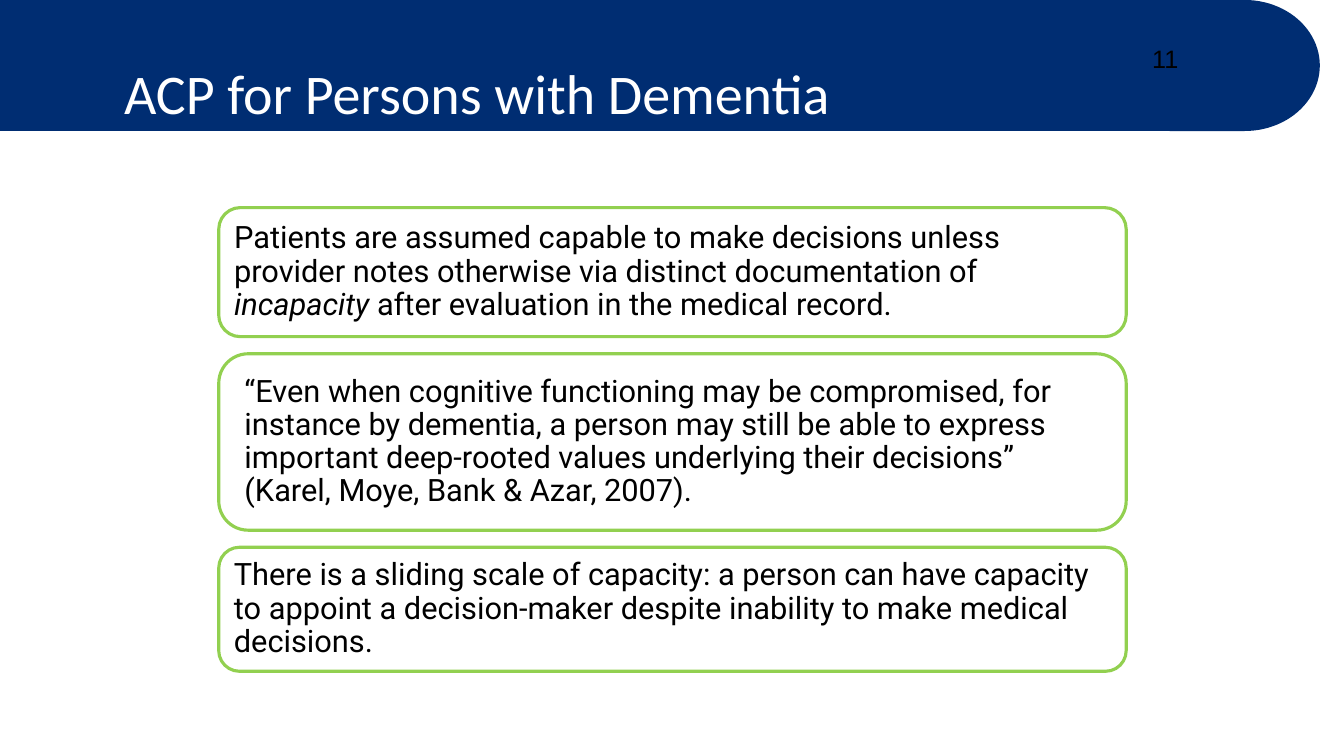
import pptx
import pptx.dml.color
import pptx.enum.shapes
import pptx.enum.text
import pptx.util

Inches = pptx.util.Inches
Pt = pptx.util.Pt
MSO_SHAPE = pptx.enum.shapes.MSO_SHAPE
MSO_ANCHOR = pptx.enum.text.MSO_ANCHOR
PP_ALIGN = pptx.enum.text.PP_ALIGN

COLORS = {"navy": "002D72", "green": "92D050", "black": "000000", "white": "FFFFFF"}

# Each statement: height, inset, runs of (text, italic)
STATEMENTS = [
    (1.28, 0.09, [
        ("Patients are assumed capable to make decisions unless provider notes "
         "otherwise via distinct documentation of ", False),
        ("incapacity", True),
        (" after evaluation in the medical record.", False),
    ]),
    (1.75, 0.17, [
        ("“Even when cognitive functioning may be compromised, for instance by "
         "dementia, a person may still be able to express important deep-rooted "
         "values underlying their decisions” (Karel, Moye, Bank & Azar, 2007).", False),
    ]),
    (1.23, 0.09, [
        ("There is a sliding scale of capacity: a person can have capacity to "
         "appoint a decision-maker despite inability to make medical decisions.", False),
    ]),
]


def rgb(name):
    return pptx.dml.color.RGBColor.from_string(COLORS[name])


def write_text(shape, runs, *, font, size, color, anchor=MSO_ANCHOR.TOP,
               inset_x=0.1, inset_y=0.05, line_spacing=None):
    """Fill a shape with one left-aligned paragraph of (text, italic) runs."""
    frame = shape.text_frame
    frame.word_wrap = True
    frame.auto_size = pptx.enum.text.MSO_AUTO_SIZE.NONE
    frame.vertical_anchor = anchor
    frame.margin_left = frame.margin_right = Inches(inset_x)
    frame.margin_top = frame.margin_bottom = Inches(inset_y)
    paragraph = frame.paragraphs[0]
    paragraph.alignment = PP_ALIGN.LEFT
    paragraph.line_spacing = line_spacing
    for text, italic in runs:
        run = paragraph.add_run()
        run.text = text
        run.font.name = font
        run.font.size = Pt(size)
        run.font.italic = italic
        run.font.color.rgb = rgb(color)


def add_shape(slide, kind, left, top, width, height, fill=None, line=None):
    shape = slide.shapes.add_shape(
        kind, Inches(left), Inches(top), Inches(width), Inches(height))
    shape.shadow.inherit = False
    if fill:
        shape.fill.solid()
        shape.fill.fore_color.rgb = rgb(fill)
    else:
        shape.fill.background()
    if line:
        shape.line.color.rgb = rgb(line)
        shape.line.width = Pt(2.25)
    else:
        shape.line.fill.background()
    return shape


def add_header(slide, left, top, width, height):
    """Draw the banner with its rounded end, the title and the slide number."""
    cap_width = 1.49
    add_shape(slide, MSO_SHAPE.FLOWCHART_DELAY, left + width - cap_width, top,
              cap_width, height, fill="navy")
    add_shape(slide, MSO_SHAPE.RECTANGLE, left, top, width - 1.15, height, fill="navy")

    number = slide.shapes.add_textbox(
        Inches(left + 11.33), Inches(top + 0.38), Inches(0.87), Inches(0.84))
    write_text(number, [("11", False)], font="Arial", size=18, color="black")

    title = slide.shapes.title
    title_height = 0.77
    title.left, title.top = Inches(left + 1.13), Inches(top + height - title_height)
    title.width, title.height = Inches(10.71), Inches(title_height)
    write_text(title, [("ACP for Persons with Dementia", False)], font="Calibri",
               size=40, color="white", anchor=MSO_ANCHOR.MIDDLE)
    # Bring the title in front of the banner
    slide.shapes._spTree.append(title._element)


def add_statements(slide, left, top, width, gap):
    """Stack the outlined statement boxes downwards with equal gaps."""
    for height, inset, runs in STATEMENTS:
        box = add_shape(slide, MSO_SHAPE.ROUNDED_RECTANGLE, left, top, width, height,
                        line="green")
        write_text(box, runs, font="Roboto", size=22, color="black",
                   anchor=MSO_ANCHOR.MIDDLE, inset_x=inset, inset_y=inset,
                   line_spacing=0.9)
        top += height + gap


def main():
    presentation = pptx.Presentation()
    presentation.slide_width = Inches(13.33)
    presentation.slide_height = Inches(7.5)
    slide = presentation.slides.add_slide(presentation.slide_layouts[5])
    add_header(slide, 0, 0, 13.09, 1.3)
    add_statements(slide, 2.17, 2.06, 9, gap=0.17)
    presentation.save("out.pptx")


if __name__ == "__main__":
    main()
